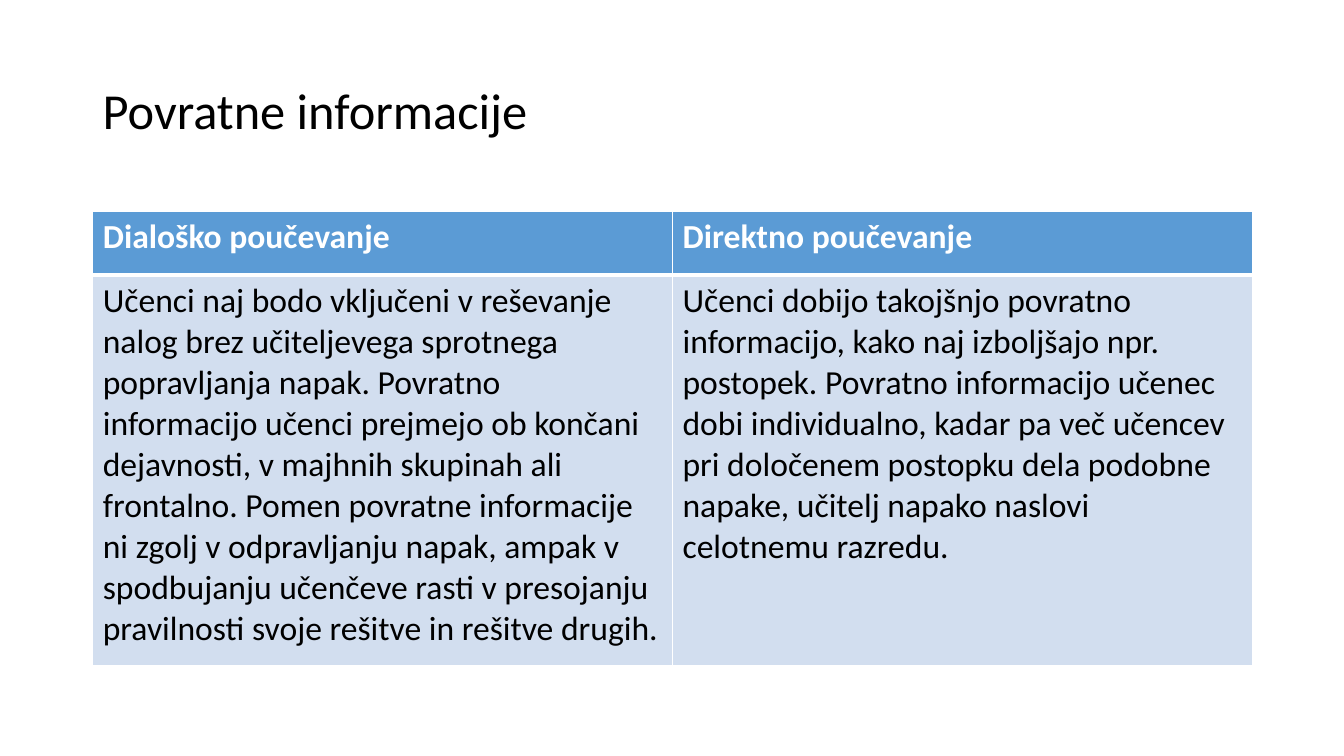
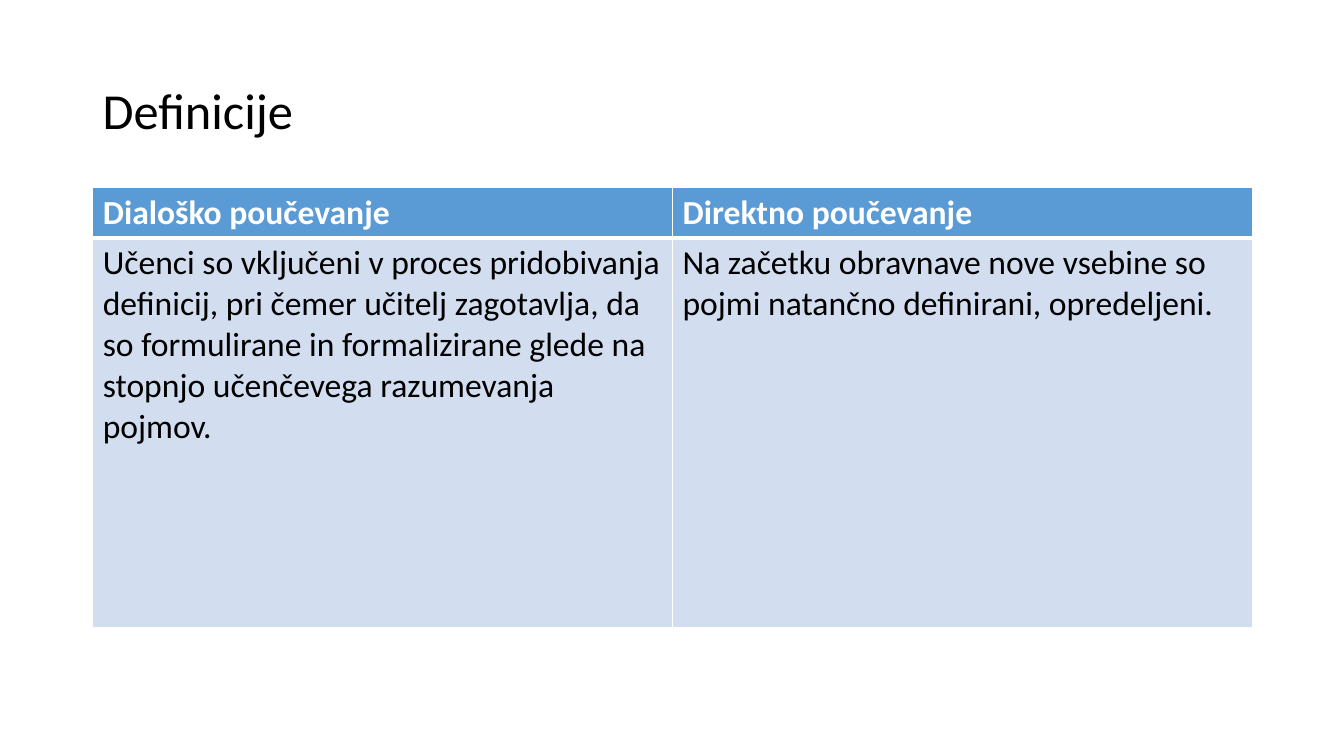
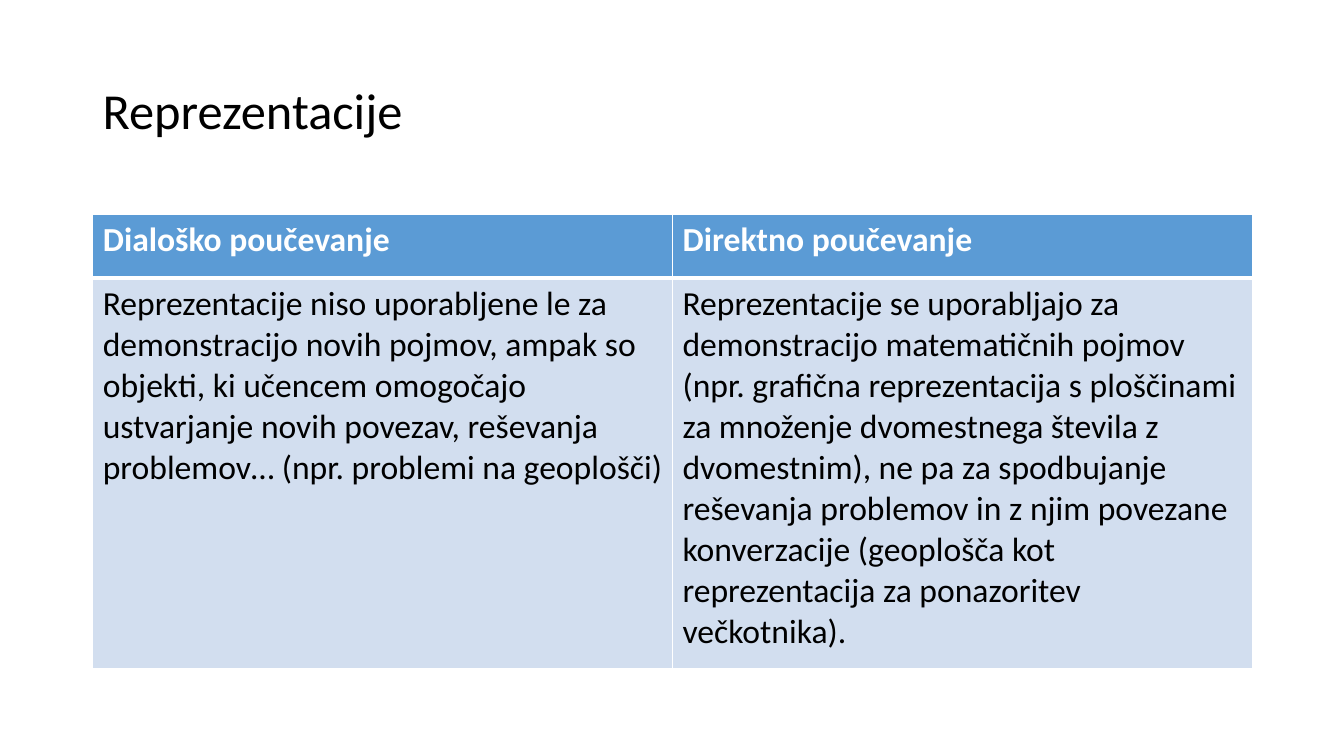
import pptx
import pptx.dml.color
import pptx.enum.text
import pptx.oxml.ns
import pptx.util
import lxml.etree

# Shared look
FONT = "Calibri"
BLACK, WHITE, BLUE, PALE = "000000", "FFFFFF", "5B9BD5", "D2DEEF"
WIDE, HIGH = 13.33, 7.5
LEFT, SPAN = 0.92, 11.5
BODY = 3.87
HEADS = ("Dialoško poučevanje", "Direktno poučevanje")

# Title, table top, header height, body texts
PAGES = (
    ("Povratne informacije", 2.1, 0.63, (
        "Učenci naj bodo vključeni v reševanje nalog brez učiteljevega "
        "sprotnega popravljanja napak. Povratno informacijo učenci prejmejo "
        "ob končani dejavnosti, v majhnih skupinah ali frontalno. Pomen "
        "povratne informacije ni zgolj v odpravljanju napak, ampak v "
        "spodbujanju učenčeve rasti v presojanju pravilnosti svoje rešitve "
        "in rešitve drugih.",
        "Učenci dobijo takojšnjo povratno informacijo, kako naj izboljšajo "
        "npr. postopek. Povratno informacijo učenec dobi individualno, kadar "
        "pa več učencev pri določenem postopku dela podobne napake, učitelj "
        "napako naslovi celotnemu razredu.")),
    ("Definicije", 1.86, 0.5, (
        "Učenci so vključeni v proces pridobivanja definicij, pri čemer "
        "učitelj zagotavlja, da so formulirane in formalizirane glede na "
        "stopnjo učenčevega razumevanja pojmov.",
        "Na začetku obravnave nove vsebine so pojmi natančno definirani, "
        "opredeljeni.")),
    ("Reprezentacije", 2.13, 0.63, (
        "Reprezentacije niso uporabljene le za demonstracijo novih pojmov, "
        "ampak so objekti, ki učencem omogočajo ustvarjanje novih povezav, "
        "reševanja problemov… (npr. problemi na geoplošči)",
        "Reprezentacije se uporabljajo za demonstracijo matematičnih pojmov "
        "(npr. grafična reprezentacija s ploščinami za množenje dvomestnega "
        "števila z dvomestnim), ne pa za spodbujanje reševanja problemov in "
        "z njim povezane konverzacije (geoplošča kot reprezentacija za "
        "ponazoritev večkotnika).")),
)


def inch(size):
    return pptx.util.Inches(size)


def color(code):
    return pptx.dml.color.RGBColor.from_string(code)


def write(frame, text, size, tint, bold=False):
    frame.text = text
    font = frame.paragraphs[0].runs[0].font
    font.name, font.size, font.bold = FONT, pptx.util.Pt(size), bold
    font.color.rgb = color(tint)


def add_title(slide, text):
    box = slide.shapes.add_textbox(inch(LEFT), inch(0.4), inch(SPAN), inch(1.45))
    frame = box.text_frame
    frame.word_wrap = True
    frame.vertical_anchor = pptx.enum.text.MSO_ANCHOR.MIDDLE
    write(frame, text, 36, BLACK)
    frame.paragraphs[0].line_spacing = 0.9


def add_edges(cell, top, base):
    """Draw white cell borders; widths are in points."""
    qn = pptx.oxml.ns.qn
    props = cell._tc.get_or_add_tcPr()
    for side, width in (("L", 1), ("R", 1), ("T", top), ("B", base)):
        line = lxml.etree.SubElement(
            props, qn(f"a:ln{side}"), w=str(pptx.util.Pt(width)))
        fill = lxml.etree.SubElement(line, qn("a:solidFill"))
        lxml.etree.SubElement(fill, qn("a:srgbClr"), val=WHITE)


def add_grid(slide, top, head, texts):
    frame = slide.shapes.add_table(
        2, len(HEADS), inch(LEFT), inch(top), inch(SPAN), inch(head + BODY))
    grid = frame.table
    # Row height, texts, fill, text colour, bold, top and bottom edges
    rows = ((head, HEADS, BLUE, WHITE, True, 1, 3),
            (BODY, texts, PALE, BLACK, False, 3, 1))
    for r, (tall, words, fill, tint, bold, over, under) in enumerate(rows):
        grid.rows[r].height = inch(tall)
        for c, text in enumerate(words):
            cell = grid.cell(r, c)
            write(cell.text_frame, text, 24, tint, bold)
            add_edges(cell, over, under)
            cell.fill.solid()
            cell.fill.fore_color.rgb = color(fill)


def main():
    deck = pptx.Presentation()
    deck.slide_width, deck.slide_height = inch(WIDE), inch(HIGH)
    for title, top, head, texts in PAGES:
        slide = deck.slides.add_slide(deck.slide_layouts[6])
        add_title(slide, title)
        add_grid(slide, top, head, texts)
    deck.save("out.pptx")


if __name__ == "__main__":
    main()
